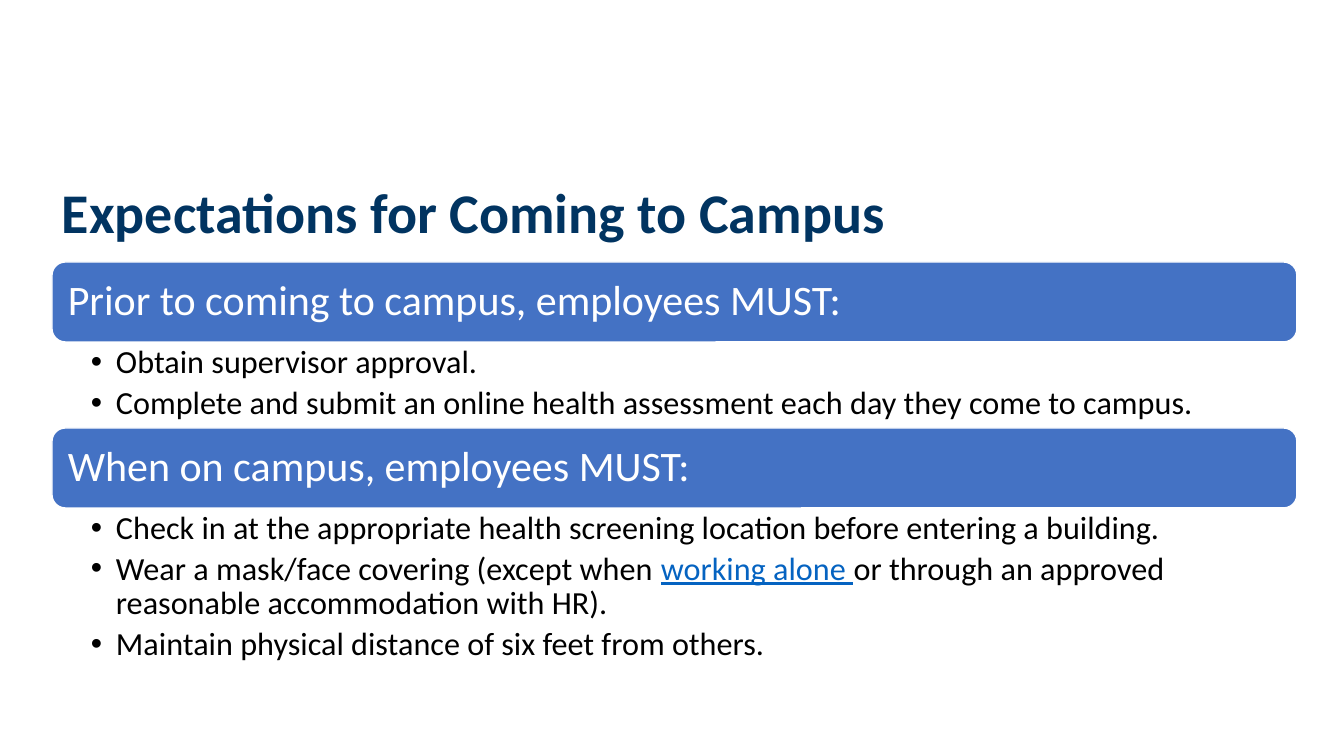
"""Build the slide on expectations for coming to campus."""
import pptx
import pptx.dml.color
import pptx.enum.shapes
import pptx.enum.text
import pptx.oxml
import pptx.oxml.ns
import pptx.util

RGBColor = pptx.dml.color.RGBColor
NAVY = RGBColor(0x01, 0x34, 0x61)
BLUE = RGBColor(0x44, 0x72, 0xC4)
LINK = RGBColor(0x05, 0x63, 0xC1)
WHITE = RGBColor(0xFF, 0xFF, 0xFF)
BLACK = RGBColor(0x00, 0x00, 0x00)

TITLE = "Expectations for Coming to Campus"
SECTIONS = [
    ("Prior to coming to campus, employees MUST:", 86, [
        [("Obtain supervisor approval.", False)],
        [("Complete and submit an online health assessment each day they come to campus.", False)],
    ]),
    ("When on campus, employees MUST:", 167, [
        [("Check in at the appropriate health screening location before entering a building.", False)],
        [("Wear a mask/face covering (except when ", False),
         ("working alone ", True),
         ("or through an approved reasonable accommodation with HR).", False)],
        [("Maintain physical distance of six feet from others.", False)],
    ]),
]

LEFT, WIDTH = 52, 1245
TITLE_TOP, TITLE_HEIGHT = 180, 57
SECTIONS_TOP, BAR_HEIGHT = 262, 80
BULLET_INDENT = 25

TITLE_FONT = {"name": "Calibri", "size": pptx.util.Pt(40), "bold": True}
BAR_FONT = {"name": "Calibri", "size": pptx.util.Pt(30)}
BULLET_FONT = {"name": "Calibri", "size": pptx.util.Pt(23)}


def px(length):
    return pptx.util.Emu(round(length * 914400 / 100.8))


def set_all(target, values):
    for name, value in values.items():
        setattr(target, name, value)


def set_frame(frame, anchor, left, top, right, bottom):
    set_all(frame, {
        "word_wrap": True, "auto_size": pptx.enum.text.MSO_AUTO_SIZE.NONE,
        "vertical_anchor": anchor, "margin_left": px(left), "margin_top": px(top),
        "margin_right": px(right), "margin_bottom": px(bottom)})


def write(para, spans, font, space_after=0):
    set_all(para, {"alignment": pptx.enum.text.PP_ALIGN.LEFT, "line_spacing": 0.9,
                   "space_before": pptx.util.Pt(0),
                   "space_after": pptx.util.Pt(space_after)})
    for text, color, underline in spans:
        span = para.add_run()
        span.text = text
        set_all(span.font, font)
        span.font.color.rgb = color
        if underline:
            span.font.underline = True


def add_bullet(para):
    properties = para._p.get_or_add_pPr()
    properties.set("marL", str(px(BULLET_INDENT)))
    properties.set("indent", str(-px(BULLET_INDENT)))
    namespace = pptx.oxml.ns.nsdecls("a")
    for element in ('a:buFont {} typeface="Arial"', 'a:buChar {} char="•"'):
        properties.append(pptx.oxml.parse_xml(f"<{element.format(namespace)}/>"))


def add_bar(page, top, heading):
    bar = page.shapes.add_shape(pptx.enum.shapes.MSO_SHAPE.ROUNDED_RECTANGLE,
                                px(LEFT), px(top), px(WIDTH), px(BAR_HEIGHT))
    bar.shadow.inherit = False
    bar.fill.solid()
    bar.fill.fore_color.rgb = BLUE
    bar.line.color.rgb = WHITE
    bar.line.width = pptx.util.Pt(1)
    set_frame(bar.text_frame, pptx.enum.text.MSO_ANCHOR.MIDDLE, 12, 12, 12, 12)
    write(bar.text_frame.paragraphs[0], [(heading, WHITE, False)], BAR_FONT)


def add_bullets(page, top, height, bullets):
    box = page.shapes.add_textbox(px(LEFT), px(top), px(WIDTH), px(height))
    frame = box.text_frame
    set_frame(frame, pptx.enum.text.MSO_ANCHOR.TOP, 39, 4, 23, 4)
    for index, bullet in enumerate(bullets):
        para = frame.add_paragraph() if index else frame.paragraphs[0]
        add_bullet(para)
        spans = [(text, LINK if linked else BLACK, linked) for text, linked in bullet]
        write(para, spans, BULLET_FONT, 4)


def main():
    deck = pptx.Presentation()
    set_all(deck, {"slide_width": px(1344), "slide_height": px(756)})
    page = deck.slides.add_slide(deck.slide_layouts.get_by_name("Title Only"))
    title = page.shapes.title
    set_all(title, {"left": px(LEFT), "top": px(TITLE_TOP),
                    "width": px(WIDTH), "height": px(TITLE_HEIGHT)})
    set_frame(title.text_frame, pptx.enum.text.MSO_ANCHOR.TOP, 10, 5, 10, 5)
    write(title.text_frame.paragraphs[0], [(TITLE, NAVY, False)], TITLE_FONT)

    top = SECTIONS_TOP
    for heading, bullets_height, bullets in SECTIONS:
        add_bar(page, top, heading)
        add_bullets(page, top + BAR_HEIGHT, bullets_height, bullets)
        top += BAR_HEIGHT + bullets_height
    deck.save("out.pptx")


if __name__ == "__main__":
    main()
